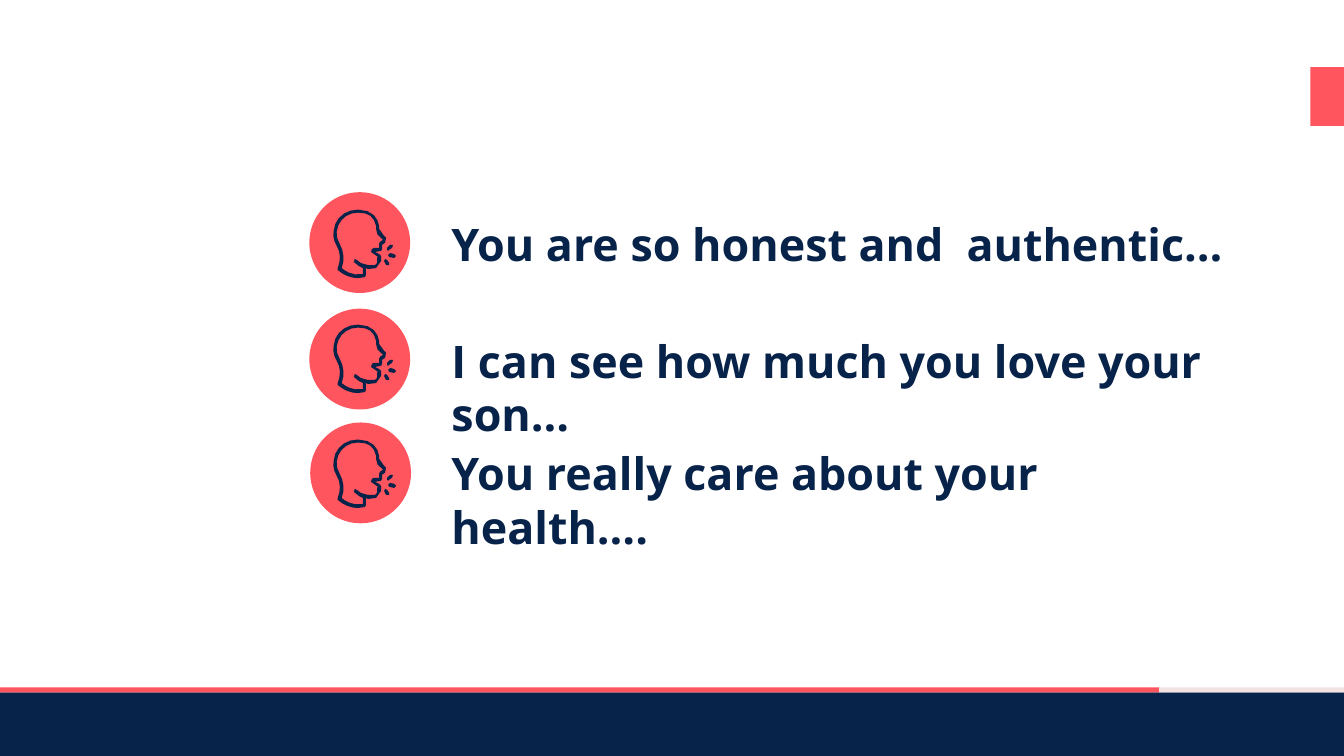
"""Build a slide of three spoken affirmations, each beside a speaking-head icon."""

from dataclasses import dataclass
from math import dist

from pptx import Presentation
from pptx.dml.color import RGBColor
from pptx.enum.shapes import MSO_SHAPE
from pptx.enum.text import MSO_AUTO_SIZE
from pptx.util import Pt


@dataclass(frozen=True)
class Theme:
    navy: str = "082349"
    coral: str = "FF555E"
    blush: str = "F3E2E2"
    font: str = "Open Sans"
    size: float = 32


THEME = Theme()
SLIDE_SIZE = (960, 540)

BARS = [
    (0, 494.6, 960, 45.4, THEME.navy),
    (0, 491, 828, 3.6, THEME.coral),
    (828, 491, 132, 3.6, THEME.blush),
    (936, 48, 24, 42, THEME.coral),
]

AFFIRMATIONS = [
    {"text": "You are so honest and  authentic…", "top": 151.2, "width": 576, "height": 46,
     "circle": (221, 137.3)},
    {"text": "I can see how much you love your son…", "top": 234.6, "width": 613.4, "height": 85,
     "circle": (221, 220.5)},
    {"text": "You really care about your health….", "top": 314.8, "width": 576, "height": 85,
     "circle": (221.6, 301.8)},
]
TEXT_LEFT = 315.4
CIRCLE_SIZE = 72
HEAD_LEFT, HEAD_TOP, HEAD_PITCH = 236.9, 148.3, 82.1
ICON_UNIT = 0.72
STEP_LENGTH = 6

HEAD_OUTSIDE = [
    (54, 30), (52, 28), (49, 26, 47, 24, 47, 21), (47, 18),
    (46, 11, 41, 2, 26, 2), (13, 2, 3, 11, 2, 23), (1, 28, 2, 33, 5, 38),
    (9, 44, 9, 53, 6, 60), (6, 62), (12, 67, 19, 70, 26, 70), (33, 69), (34, 67),
    (34, 60), (36, 61), (38, 61, 41, 61, 44, 60), (47, 60, 49, 56, 49, 53),
    (49, 48), (47, 46), (45, 46, 43, 45, 43, 44), (49, 43), (50, 41), (50, 37),
    (53, 35), (55, 33, 55, 31, 54, 30),
]
HEAD_INSIDE = [
    (51, 32), (48, 34), (47, 36), (47, 40), (42, 40), (40, 41), (39, 44),
    (40, 46, 41, 49, 46, 49), (45, 50), (45, 55), (43, 57), (36, 57),
    (33, 57, 31, 56, 29, 55), (25, 52), (23, 51), (22, 54), (27, 58), (31, 60),
    (31, 66), (20, 68, 12, 62, 10, 60), (13, 52, 12, 43, 8, 36),
    (5, 32, 5, 28, 5, 24), (6, 13, 15, 5, 26, 5), (37, 5, 42, 9, 44, 18),
    (44, 21), (44, 25, 46, 29, 50, 31),
]
SOUND_MIDDLE = [(62, 50), (64, 48), (62, 46), (58, 45), (56, 47), (57, 49)]
SOUND_LOWER = [(54, 57), (57, 57), (57, 55), (55, 52), (53, 51), (52, 53)]
SOUND_UPPER = [(56, 43), (57, 42), (60, 40), (61, 37), (58, 37), (55, 40), (55, 42)]
ICON_PARTS = [[SOUND_MIDDLE], [SOUND_LOWER], [SOUND_UPPER], [HEAD_OUTSIDE, HEAD_INSIDE]]


def paint(shape, color):
    shape.shadow.inherit = False
    shape.fill.solid()
    shape.fill.fore_color.rgb = RGBColor.from_string(color)
    shape.line.fill.background()


def add_filled(shapes, kind, left, top, width, height, color):
    shape = shapes.add_shape(kind, Pt(left), Pt(top), Pt(width), Pt(height))
    paint(shape, color)


def trace(outline):
    points = [outline[0]]
    for segment in outline[1:]:
        if len(segment) == 2:
            points.append(segment)
            continue
        curve = (points[-1], segment[:2], segment[2:4], segment[4:])
        steps = max(1, round(dist(curve[0], curve[3]) / STEP_LENGTH))
        for step in range(1, steps + 1):
            t = step / steps
            weights = ((1 - t) ** 3, 3 * t * (1 - t) ** 2, 3 * t * t * (1 - t), t ** 3)
            points.append(tuple(
                sum(weight * point[axis] for weight, point in zip(weights, curve))
                for axis in (0, 1)
            ))
    return points


def add_icon_part(shapes, outlines, top):
    contours = [
        [(Pt(HEAD_LEFT + x * ICON_UNIT), Pt(top + y * ICON_UNIT)) for x, y in trace(outline)]
        for outline in outlines
    ]
    builder = shapes.build_freeform(*contours[0][0])
    builder.add_line_segments(contours[0][1:], close=True)
    for contour in contours[1:]:
        builder.move_to(*contour[0])
        builder.add_line_segments(contour[1:], close=True)
    paint(builder.convert_to_shape(), THEME.navy)


def add_affirmation(slide, affirmation):
    box = slide.shapes.add_textbox(
        Pt(TEXT_LEFT), Pt(affirmation["top"]), Pt(affirmation["width"]), Pt(affirmation["height"])
    )
    frame = box.text_frame
    frame.word_wrap = True
    frame.auto_size = MSO_AUTO_SIZE.SHAPE_TO_FIT_TEXT
    run = frame.paragraphs[0].add_run()
    run.text = affirmation["text"]
    run.font.name = THEME.font
    run.font.size = Pt(THEME.size)
    run.font.bold = True
    run.font.color.rgb = RGBColor.from_string(THEME.navy)


def main():
    presentation = Presentation()
    presentation.slide_width, presentation.slide_height = map(Pt, SLIDE_SIZE)
    slide = presentation.slides.add_slide(presentation.slide_layouts[6])
    for bar in BARS:
        add_filled(slide.shapes, MSO_SHAPE.RECTANGLE, *bar)
    for affirmation in AFFIRMATIONS:
        add_affirmation(slide, affirmation)
    for row, affirmation in enumerate(AFFIRMATIONS):
        icon = slide.shapes.add_group_shape()
        add_filled(icon.shapes, MSO_SHAPE.OVAL, *affirmation["circle"],
                   CIRCLE_SIZE, CIRCLE_SIZE, THEME.coral)
        for part in ICON_PARTS:
            add_icon_part(icon.shapes, part, HEAD_TOP + row * HEAD_PITCH)
    presentation.save("out.pptx")


if __name__ == "__main__":
    main()
